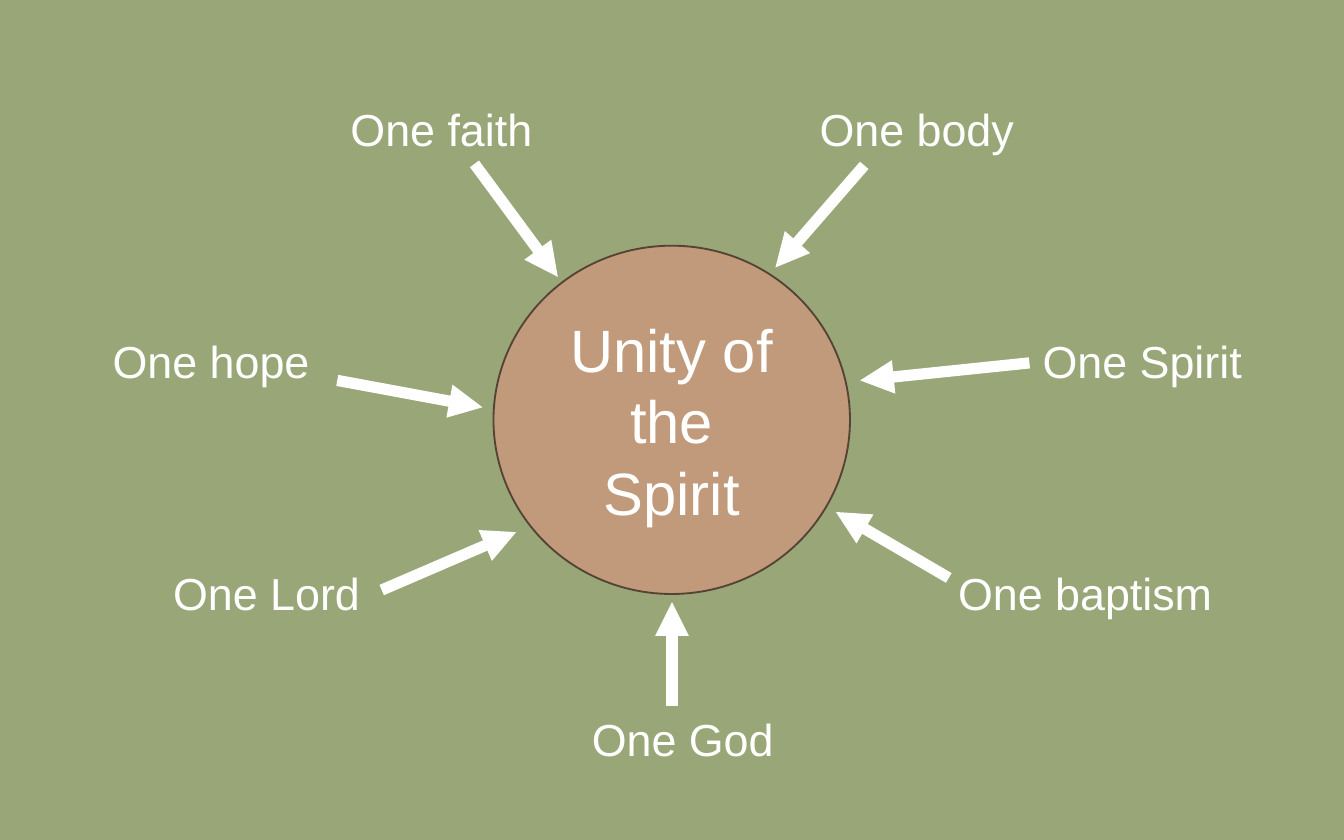
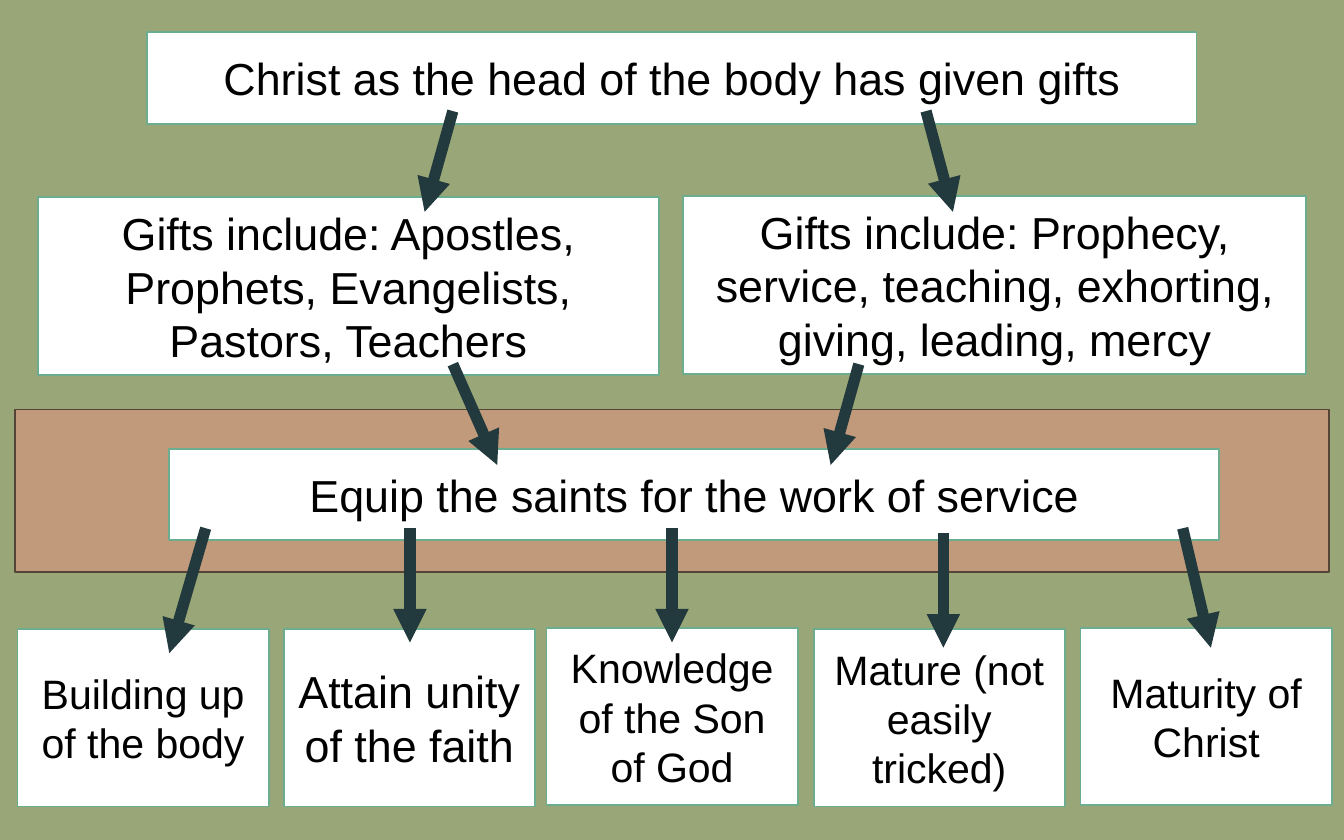
from dataclasses import dataclass

import lxml.etree
import pptx
import pptx.dml.color
import pptx.enum.shapes
import pptx.enum.text
import pptx.oxml.ns
import pptx.slide
import pptx.util

Pt = pptx.util.Pt
SHAPE = pptx.enum.shapes.MSO_SHAPE
ALIGN = pptx.enum.text.PP_ALIGN

FONT = "Arial"
COLORS = {
    "background": "99A677",
    "clay": "C19A7B",
    "clay_line": "554336",
    "white": "FFFFFF",
    "box_line": "6DAD8F",
    "black": "000000",
    "dark_arrow": "223A3D",
}


@dataclass
class Label:
    text: str
    left: float
    top: float
    width: float = 127.4
    height: float = 36


@dataclass
class Panel:
    text: str
    left: float
    top: float
    width: float
    height: float
    size: float = 24
    kind: SHAPE = SHAPE.RECTANGLE
    fill: str = "white"
    line: str = "box_line"
    color: str = "black"


@dataclass
class Arrow:
    x1: float
    y1: float
    x2: float
    y2: float


UNITY_CIRCLE = Panel("Unity of the Spirit", 264.4, 131.6, 191, 186.6, 32,
                     SHAPE.OVAL, "clay", "clay_line", "white")

UNITY_LABELS = [
    Label("One faith", 180.7, 51.1),
    Label("One body", 432, 51.1),
    Label("One Spirit", 551.5, 175.2),
    Label("One hope", 53.3, 175.2),
    Label("One Lord", 85.7, 299.5),
    Label("One baptism", 506.2, 299.5, 175.7),
    Label("One God", 310, 378),
]

UNITY_ARROWS = [
    Arrow(254.2, 87.8, 298.8, 148.3),
    Arrow(180.7, 203.8, 258.5, 218.2),
    Arrow(204.5, 316.1, 276.5, 285.1),
    Arrow(360, 378, 360, 322.6),
    Arrow(463, 88.6, 415.4, 143.3),
    Arrow(551.5, 194.4, 460.8, 203.8),
    Arrow(508.3, 309.6, 447.8, 274.3),
]

GIFT_PANELS = [
    Panel("", 7.9, 219.4, 704.2, 87.1, fill="clay", line="clay_line"),
    Panel("Christ as the head of the body has given gifts", 78.7, 17.3, 562.3, 49),
    Panel("Gifts include: Apostles, Prophets, Evangelists, Pastors, Teachers",
          20.3, 105.7, 332.6, 95.2),
    Panel("Gifts include: Prophecy, service, teaching, exhorting, giving, leading, mercy",
          365.8, 105.1, 334.1, 95.2),
    Panel("Equip the saints for the work of service", 90.7, 240.5, 562.3, 49),
]

OUTCOME_WIDTH, OUTCOME_HEIGHT = 134.6, 95
OUTCOMES = [
    ("Building up of the body", 9.4, 337.1, 22),
    ("Attain unity of the faith", 152, 337.1, 24),
    ("Knowledge of the Son of God", 292.8, 336.4, 22),
    ("Mature (not easily tricked)", 435.9, 337.1, 22),
    ("Maturity of Christ", 578.9, 336.4, 22),
]

GIFT_ARROWS = [
    Arrow(242.6, 59.5, 227.5, 113.5),
    Arrow(496.1, 59.5, 510.5, 113.5),
    Arrow(242.6, 195.1, 266.4, 249.1),
    Arrow(460.1, 195.1, 445, 249.1),
    Arrow(110.2, 283, 90.7, 349.9),
    Arrow(219.6, 283, 219.6, 344.2),
    Arrow(360, 283, 360, 344.2),
    Arrow(505.4, 285.8, 505.4, 347),
    Arrow(633.6, 283, 648.7, 347),
]


def rgb(name: str) -> pptx.dml.color.RGBColor:
    return pptx.dml.color.RGBColor.from_string(COLORS[name])


def write(tf, text: str, size: float, color: str, align: ALIGN) -> None:
    tf.word_wrap = True
    p = tf.paragraphs[0]
    p.text = text
    p.alignment = align
    p.font.name = FONT
    p.font.size = Pt(size)
    p.font.color.rgb = rgb(color)


def draw_panel(s: pptx.slide.Slide, panel: Panel) -> None:
    sp = s.shapes.add_shape(panel.kind, Pt(panel.left), Pt(panel.top),
                            Pt(panel.width), Pt(panel.height))
    sp.shadow.inherit = False
    sp.fill.solid()
    sp.fill.fore_color.rgb = rgb(panel.fill)
    sp.line.color.rgb = rgb(panel.line)
    sp.line.width = Pt(1)
    if panel.text:
        sp.text_frame.vertical_anchor = pptx.enum.text.MSO_ANCHOR.MIDDLE
        write(sp.text_frame, panel.text, panel.size, panel.color, ALIGN.CENTER)


def draw_label(s: pptx.slide.Slide, label: Label) -> None:
    sp = s.shapes.add_textbox(Pt(label.left), Pt(label.top),
                              Pt(label.width), Pt(label.height))
    sp.text_frame.auto_size = pptx.enum.text.MSO_AUTO_SIZE.SHAPE_TO_FIT_TEXT
    write(sp.text_frame, label.text, 24, "white", ALIGN.LEFT)


def draw_arrow(s: pptx.slide.Slide, arrow: Arrow, color: str) -> None:
    sp = s.shapes.add_connector(pptx.enum.shapes.MSO_CONNECTOR.STRAIGHT,
                                Pt(arrow.x1), Pt(arrow.y1),
                                Pt(arrow.x2), Pt(arrow.y2))
    sp.line.color.rgb = rgb(color)
    sp.line.width = Pt(6)
    qn = pptx.oxml.ns.qn
    spPr = sp._element.spPr
    lxml.etree.SubElement(spPr.find(qn("a:ln")), qn("a:tailEnd"), type="triangle")
    lxml.etree.SubElement(spPr, qn("a:effectLst"))


def add_slide(prs) -> pptx.slide.Slide:
    s = prs.slides.add_slide(prs.slide_layouts[6])
    s.background.fill.solid()
    s.background.fill.fore_color.rgb = rgb("background")
    return s


def build_unity(prs) -> None:
    s = add_slide(prs)
    draw_panel(s, UNITY_CIRCLE)
    for label in UNITY_LABELS:
        draw_label(s, label)
    for arrow in UNITY_ARROWS:
        draw_arrow(s, arrow, "white")


def build_gifts(prs) -> None:
    s = add_slide(prs)
    for panel in GIFT_PANELS:
        draw_panel(s, panel)
    for text, left, top, size in OUTCOMES:
        draw_panel(s, Panel(text, left, top, OUTCOME_WIDTH, OUTCOME_HEIGHT, size))
    for arrow in GIFT_ARROWS:
        draw_arrow(s, arrow, "dark_arrow")


def main() -> None:
    prs = pptx.Presentation()
    prs.slide_width = Pt(720)
    prs.slide_height = Pt(450)
    build_unity(prs)
    build_gifts(prs)
    prs.save("out.pptx")


if __name__ == "__main__":
    main()
